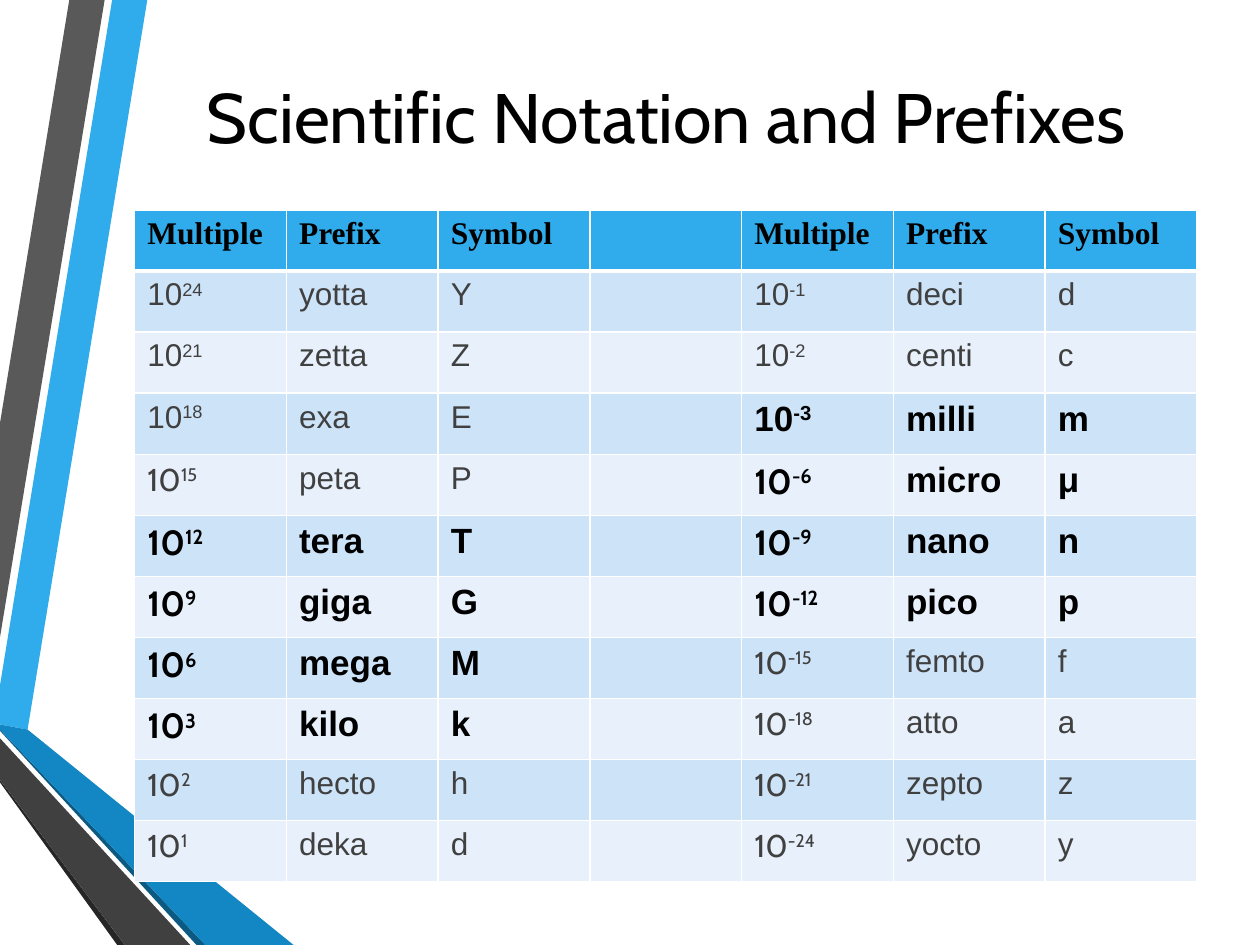
import pptx
import pptx.dml.color
import pptx.enum.text
import pptx.oxml
import pptx.oxml.ns
import pptx.util

Pt = pptx.util.Pt

BANDS = [
    ("30ACEC", [(0, 391.7), (0, 414), (15.8, 416.9), (84.2, 0), (64.1, 0)]),
    ("595959", [(59.8, 0), (39.6, 0), (0, 241.9), (0, 364.3)]),
    ("262626", [(0, 445.7), (0, 447.1), (67, 540), (71.3, 540)]),
    ("0C5A82", [(0, 416.9), (0, 417.6), (112.3, 540), (117.4, 540)]),
    ("1287C3", [(0, 416.9), (117.4, 540), (167.8, 540), (15.8, 416.9), (0, 414)]),
    ("404040", [(0, 445.7), (71.3, 540), (108.7, 540), (0, 421.9)]),
]
HEADINGS = ["Multiple", "Prefix", "Symbol"]
LARGE_PREFIXES = [
    ("24", "yotta", "Y"), ("21", "zetta", "Z"), ("18", "exa", "E"),
    ("15", "peta", "P"), ("12", "tera", "T"), ("9", "giga", "G"),
    ("6", "mega", "M"), ("3", "kilo", "k"), ("2", "hecto", "h"),
    ("1", "deka", "d"),
]
SMALL_PREFIXES = [
    ("-1", "deci", "d"), ("-2", "centi", "c"), ("-3", "milli", "m"),
    ("-6", "micro", "μ"), ("-9", "nano", "n"), ("-12", "pico", "p"),
    ("-15", "femto", "f"), ("-18", "atto", "a"), ("-21", "zepto", "z"),
    ("-24", "yocto", "y"),
]
COMMON_EXPONENTS = {"12", "9", "6", "3", "-3", "-6", "-9", "-12"}
ARIAL_EXPONENT_ROWS = 3
TABLE_LEFT, TABLE_TOP, TABLE_WIDTH, TABLE_HEIGHT = 77, 120, 607, 384
COLUMN_COUNT = 7
ROW_COUNT = len(LARGE_PREFIXES) + 1
SMALL_START = 4


def color(hex_string):
    return pptx.dml.color.RGBColor.from_string(hex_string)


def paint(fill, hex_string):
    fill.solid()
    fill.fore_color.rgb = color(hex_string)


def add_run(paragraph, text, font_name, size, hex_string, bold=False, superscript=False):
    run = paragraph.add_run()
    run.text = text
    run.font.name = font_name
    run.font.size = Pt(size)
    run.font.bold = bold
    run.font.color.rgb = color(hex_string)
    if superscript:
        run._r.get_or_add_rPr().set("baseline", "30000")


def add_band(slide, hex_string, points):
    corners = [(Pt(x), Pt(y)) for x, y in points]
    builder = slide.shapes.build_freeform(*corners[0])
    builder.add_line_segments(corners[1:], close=True)
    shape = builder.convert_to_shape()
    shape.shadow.inherit = False
    paint(shape.fill, hex_string)
    shape.line.fill.background()


def format_title(slide):
    title = slide.shapes.title
    title.left, title.top, title.width, title.height = Pt(77), Pt(36), Pt(607), Pt(60)
    frame = title.text_frame
    frame.word_wrap = True
    frame.auto_size = pptx.enum.text.MSO_AUTO_SIZE.NONE
    frame.vertical_anchor = pptx.enum.text.MSO_ANCHOR.MIDDLE
    paragraph = frame.paragraphs[0]
    paragraph.alignment = pptx.enum.text.PP_ALIGN.CENTER
    add_run(paragraph, "Scientific Notation and Prefixes", "Cabin", 40, "000000")


def add_border(cell, side, width):
    cell._tc.get_or_add_tcPr().append(pptx.oxml.parse_xml(
        f'<a:{side} {pptx.oxml.ns.nsdecls("a")} w="{Pt(width)}">'
        f'<a:solidFill><a:srgbClr val="FFFFFF"/></a:solidFill></a:{side}>'
    ))


def format_cell(cell, row):
    widths = {
        "lnL": 1,
        "lnR": 1,
        "lnT": 3 if row == 1 else 1,
        "lnB": 3 if row == 0 else 1,
    }
    for side, width in widths.items():
        add_border(cell, side, width)
    if row == 0:
        paint(cell.fill, "30ACEC")
    else:
        paint(cell.fill, "CDE3F8" if row % 2 else "E8F1FB")


def fill_prefixes(table, start, prefixes):
    for offset, heading in enumerate(HEADINGS):
        paragraph = table.cell(0, start + offset).text_frame.paragraphs[0]
        add_run(paragraph, heading, "Times New Roman", 18, "000000", True)
    for row, (exponent, prefix, symbol) in enumerate(prefixes, 1):
        common = exponent in COMMON_EXPONENTS
        style = (20, "000000", True) if common else (18, "404040", False)
        exponent_font = "Arial" if row <= ARIAL_EXPONENT_ROWS else "Cabin"
        multiple = table.cell(row, start).text_frame.paragraphs[0]
        add_run(multiple, "10", exponent_font, *style)
        add_run(multiple, exponent, exponent_font, *style, superscript=True)
        for offset, text in enumerate((prefix, symbol), 1):
            paragraph = table.cell(row, start + offset).text_frame.paragraphs[0]
            add_run(paragraph, text, "Arial", *style)


def add_prefix_table(slide):
    table = slide.shapes.add_table(
        ROW_COUNT, COLUMN_COUNT,
        Pt(TABLE_LEFT), Pt(TABLE_TOP), Pt(TABLE_WIDTH), Pt(TABLE_HEIGHT),
    ).table
    for column in table.columns:
        column.width = Pt(TABLE_WIDTH / COLUMN_COUNT)
    for index, row in enumerate(table.rows):
        row.height = Pt(TABLE_HEIGHT / ROW_COUNT)
        for cell in row.cells:
            format_cell(cell, index)
    fill_prefixes(table, 0, LARGE_PREFIXES)
    fill_prefixes(table, SMALL_START, SMALL_PREFIXES)


def main():
    presentation = pptx.Presentation()
    presentation.slide_width, presentation.slide_height = Pt(720), Pt(540)
    slide = presentation.slides.add_slide(presentation.slide_layouts[5])
    paint(slide.background.fill, "FFFFFF")
    for hex_string, points in BANDS:
        add_band(slide, hex_string, points)
    format_title(slide)
    add_prefix_table(slide)
    presentation.save("out.pptx")


if __name__ == "__main__":
    main()
